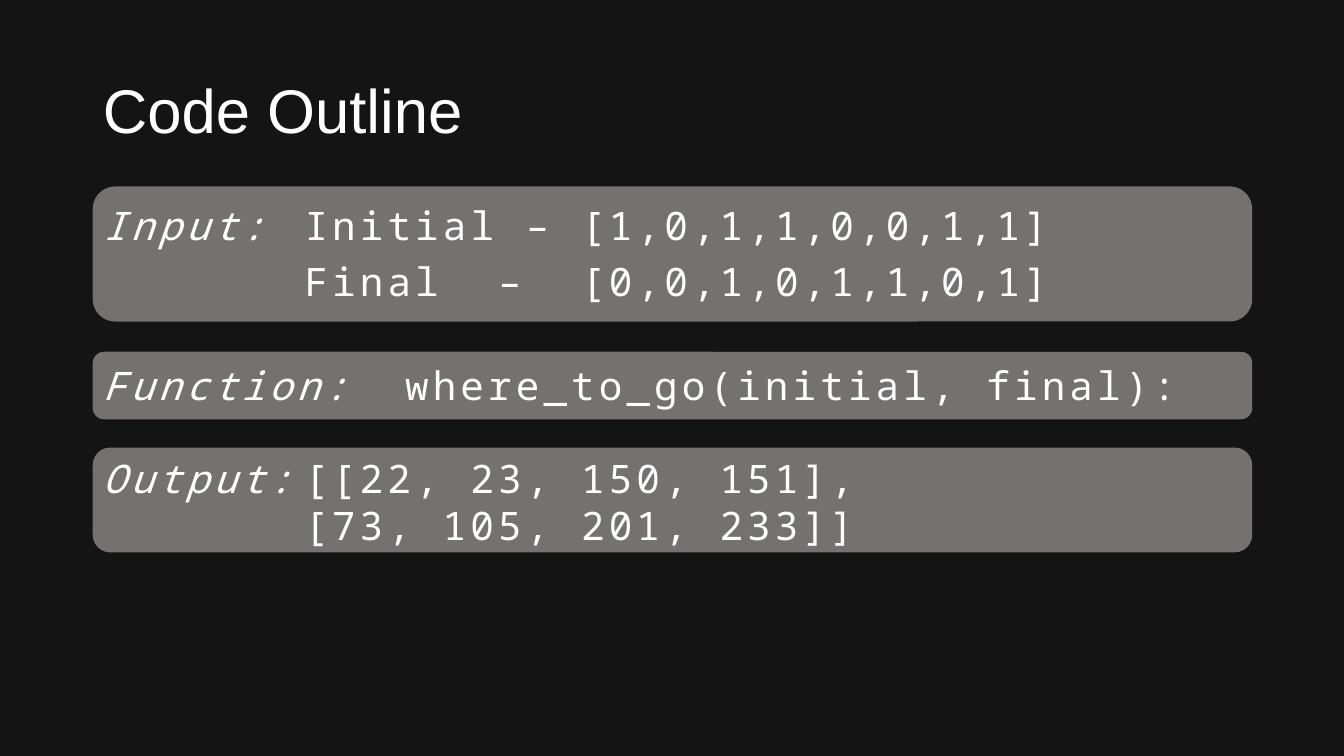
from dataclasses import dataclass
from typing import Optional

from lxml.etree import SubElement
from pptx import Presentation
from pptx.dml.color import RGBColor
from pptx.enum.shapes import MSO_SHAPE
from pptx.enum.text import MSO_ANCHOR, MSO_AUTO_SIZE, PP_ALIGN
from pptx.oxml.ns import qn
from pptx.util import Inches, Pt

LEFT, WIDTH = 0.92, 11.5
BACKGROUND, PANEL, WHITE = "141414", "767171", "FFFFFF"
CODE_FONT = "Noto Sans Mono"


@dataclass
class CodeLine:
    label: str
    code: str


@dataclass
class Section:
    panel_top: float
    panel_height: float
    text_top: float
    text_height: float
    lines: list[CodeLine]
    in_body: bool = False
    line_spacing: Optional[float] = None
    space_before: float = 0


SECTIONS = [
    Section(4.44, 1.04, 4.46, 1.04, [
        CodeLine("Output:\t", "[[22, 23, 150, 151],"),
        CodeLine("\t\t", "[73, 105, 201, 233]]"),
    ]),
    Section(3.49, 0.67, 3.54, 0.57, [
        CodeLine("Function:\t", "where_to_go(initial, final):"),
    ]),
    Section(1.85, 1.34, 2, 1.19, [
        CodeLine("Input:\t", "Initial – [1,0,1,1,0,0,1,1]"),
        CodeLine("\t\t", "Final  –  [0,0,1,0,1,1,0,1]"),
    ], in_body=True, line_spacing=0.9, space_before=10),
]


def color(value: str) -> RGBColor:
    return RGBColor.from_string(value)


def place(shape, top: float, height: float) -> None:
    shape.left, shape.top = Inches(LEFT), Inches(top)
    shape.width, shape.height = Inches(WIDTH), Inches(height)


def add_run(paragraph, text: str, font: str, size: float):
    run = paragraph.add_run()
    run.text = text
    run.font.name, run.font.size = font, Pt(size)
    run.font.color.rgb = color(WHITE)
    return run


def format_paragraph(paragraph) -> None:
    """Remove bullet and indent, and space the tab stops one inch apart."""
    properties = paragraph._p.get_or_add_pPr()
    properties.set("marL", "0")
    properties.set("indent", "0")
    properties.set("defTabSz", str(Inches(1)))
    SubElement(properties, qn("a:buNone"))


def add_panel(slide, section: Section) -> None:
    """Draw the rounded panel behind the placeholders."""
    panel = slide.shapes.add_shape(
        MSO_SHAPE.ROUNDED_RECTANGLE, Inches(LEFT), Inches(section.panel_top),
        Inches(WIDTH), Inches(section.panel_height))
    panel.shadow.inherit = False
    panel.fill.solid()
    panel.fill.fore_color.rgb = color(PANEL)
    panel.line.fill.background()
    slide.shapes.title.element.addprevious(panel.element)


def add_code(slide, section: Section) -> None:
    if section.in_body:
        shape = slide.placeholders[1]
    else:
        shape = slide.shapes.add_textbox(0, 0, 0, 0)
    place(shape, section.text_top, section.text_height)
    frame = shape.text_frame
    frame.word_wrap = True
    frame.auto_size = MSO_AUTO_SIZE.NONE
    for index, line in enumerate(section.lines):
        paragraph = frame.add_paragraph() if index else frame.paragraphs[0]
        paragraph.alignment = PP_ALIGN.JUSTIFY
        paragraph.line_spacing = section.line_spacing
        paragraph.space_before = Pt(section.space_before)
        format_paragraph(paragraph)
        for text, italic in ((line.label, True), (line.code, False)):
            run = add_run(paragraph, text, CODE_FONT, 28)
            run.font.italic = italic
            run.font._element.set("spc", "300")


def add_title(slide, text: str) -> None:
    title = slide.shapes.title
    place(title, 0.4, 1.45)
    frame = title.text_frame
    frame.auto_size = MSO_AUTO_SIZE.NONE
    frame.vertical_anchor = MSO_ANCHOR.MIDDLE
    paragraph = frame.paragraphs[0]
    paragraph.alignment = PP_ALIGN.LEFT
    paragraph.line_spacing = 0.9
    add_run(paragraph, text, "Arial", 44)


def main() -> None:
    presentation = Presentation()
    presentation.slide_width, presentation.slide_height = Inches(13.33), Inches(7.5)
    slide = presentation.slides.add_slide(presentation.slide_layouts[1])
    slide.background.fill.solid()
    slide.background.fill.fore_color.rgb = color(BACKGROUND)
    add_title(slide, "Code Outline")
    for section in SECTIONS:
        add_panel(slide, section)
        add_code(slide, section)
    presentation.save("out.pptx")


if __name__ == "__main__":
    main()
